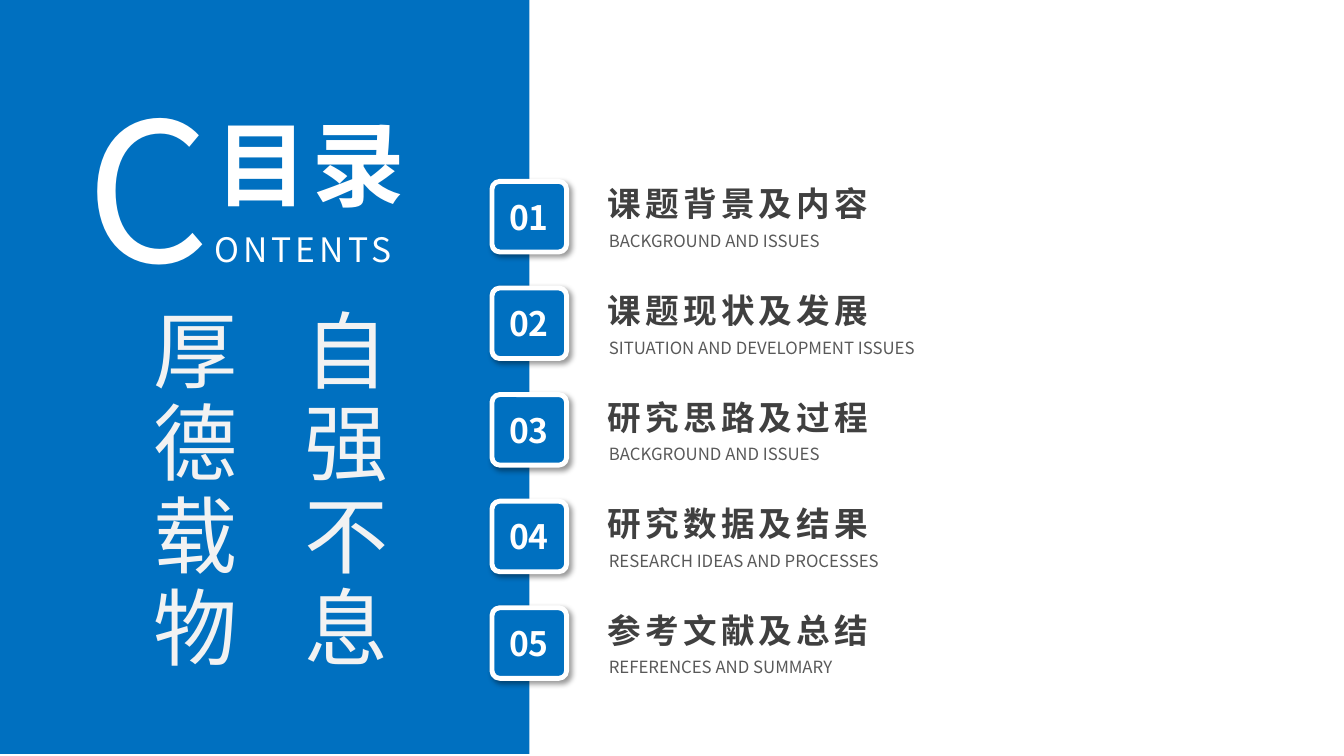
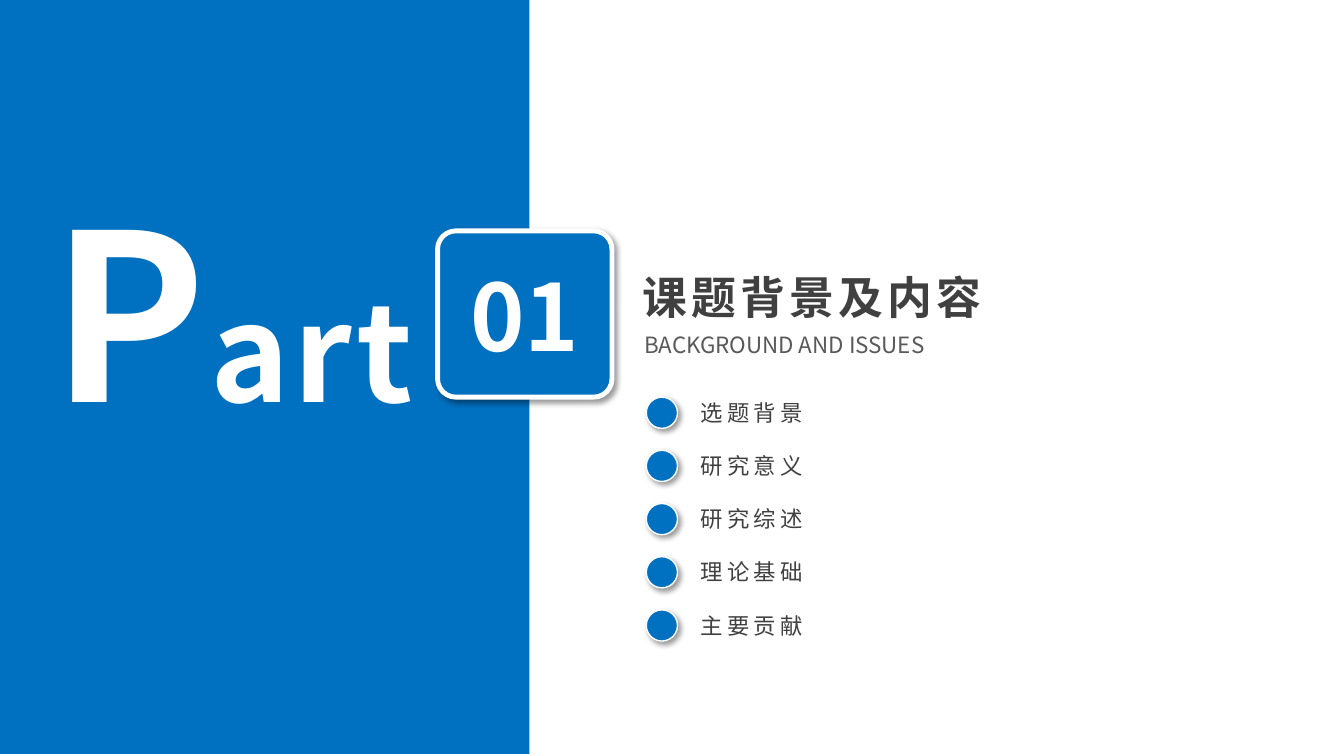
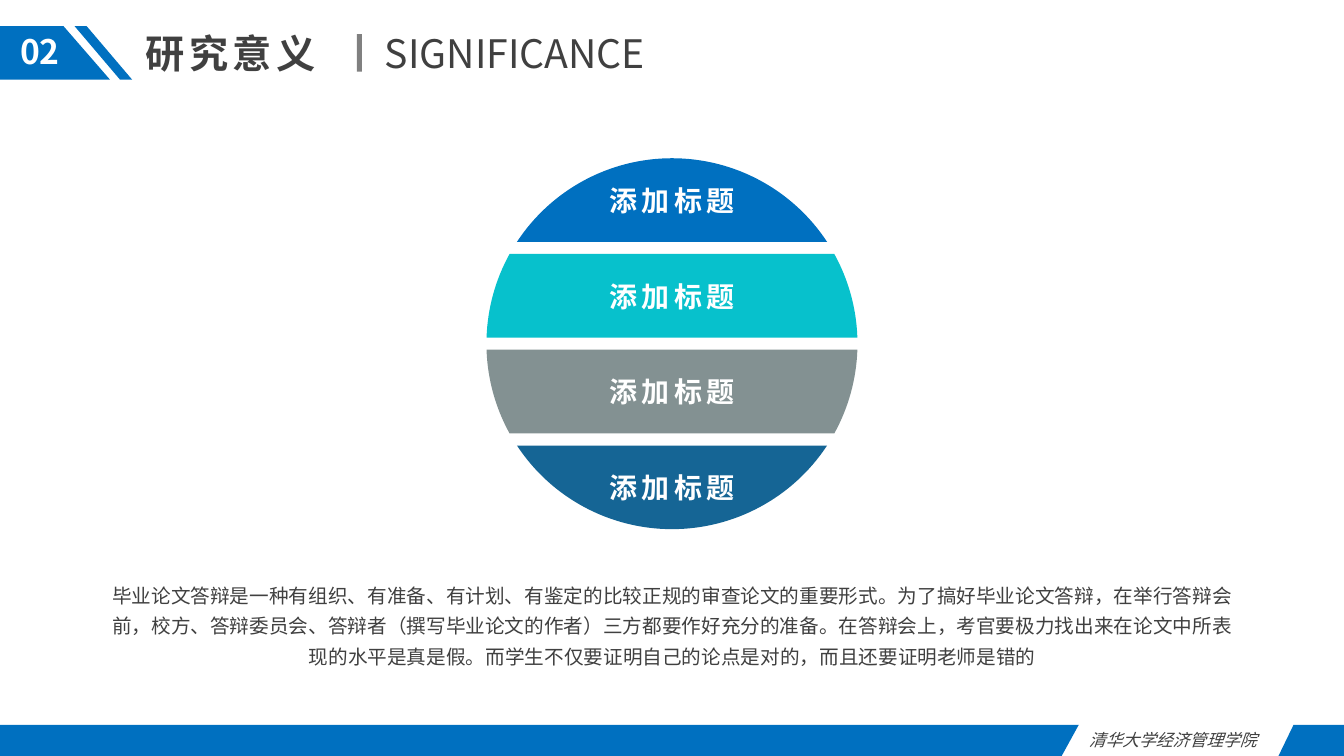
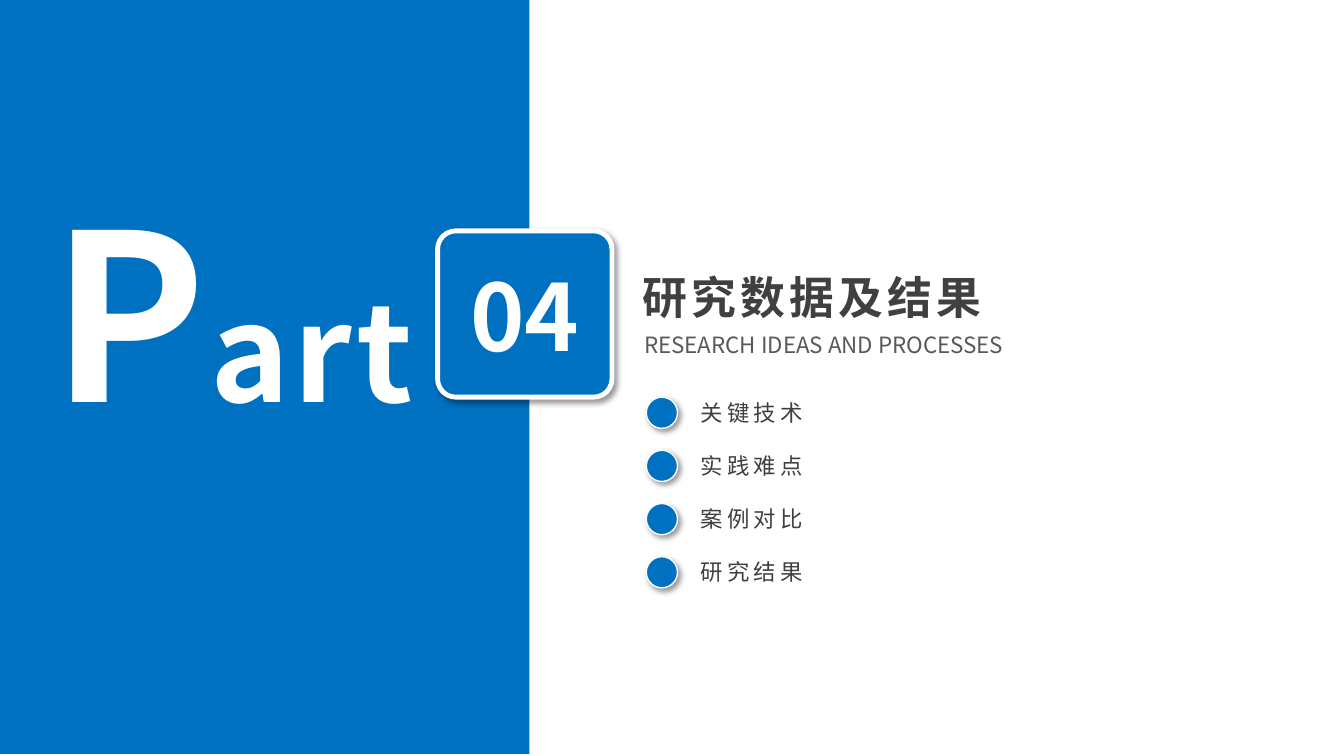
from dataclasses import dataclass
from math import asin, cos, sin, tan

from lxml import etree
from pptx import Presentation
from pptx.dml.color import RGBColor
from pptx.enum.shapes import MSO_SHAPE
from pptx.enum.text import MSO_ANCHOR, MSO_AUTO_SIZE, PP_ALIGN
from pptx.oxml.ns import qn
from pptx.util import Inches, Pt

RECT, ROUNDED, OVAL = MSO_SHAPE.RECTANGLE, MSO_SHAPE.ROUNDED_RECTANGLE, MSO_SHAPE.OVAL
LEFT, CENTER, JUSTIFY = PP_ALIGN.LEFT, PP_ALIGN.CENTER, PP_ALIGN.JUSTIFY
SLIDE_WIDTH, SLIDE_HEIGHT = 13.33, 7.5


@dataclass(frozen=True)
class Theme:
    # colours
    blue: str = "0070C0"
    teal: str = "07C1CC"
    slate: str = "839192"
    navy: str = "156595"
    white: str = "FFFFFF"
    pale: str = "F2F2F2"
    dark: str = "404040"
    muted: str = "595959"
    divider: str = "808080"
    # fonts and type sizes
    font: str = "Noto Sans CJK SC"
    body_font: str = "Arial"
    initial: int = 166
    contents_initial: int = 138
    part_word: int = 96
    display: int = 66
    motto: int = 60
    section: int = 32
    heading: int = 28
    item: int = 24
    band: int = 20
    topic: int = 16
    body: int = 14
    small: int = 12
    tracking: int = 3


THEME = Theme()

# Content: chapter title, English title and its width in the contents list
CHAPTERS = [
    ("课题背景及内容", "BACKGROUND AND ISSUES", 2.63),
    ("课题现状及发展", "SITUATION AND DEVELOPMENT ISSUES", 3.58),
    ("研究思路及过程", "BACKGROUND AND ISSUES", 2.63),
    ("研究数据及结果", "RESEARCH IDEAS AND PROCESSES", 3.35),
    ("参考文献及总结", "REFERENCES AND SUMMARY", 2.63),
]
MOTTO = ["自强不息", "厚德载物"]
PARTS = {
    1: {"english_width": 3.27,
        "topics": ["选题背景", "研究意义", "研究综述", "理论基础", "主要贡献"]},
    4: {"english_width": 4.58,
        "topics": ["关键技术", "实践难点", "案例对比", "研究结果"]},
}
SIGNIFICANCE = {
    "number": "02",
    "title": "研究意义",
    "english": "SIGNIFICANCE",
    "bands": [
        ("添加标题", THEME.blue),
        ("添加标题", THEME.teal),
        ("添加标题", THEME.slate),
        ("添加标题", THEME.navy),
    ],
    "summary": "毕业论文答辩是一种有组织、有准备、有计划、有鉴定的比较正规的审查论文的重要形式。"
               "为了搞好毕业论文答辩，在举行答辩会前，校方、答辩委员会、答辩者（撰写毕业论文的作者）"
               "三方都要作好充分的准备。在答辩会上，考官要极力找出来在论文中所表现的水平是真是假。"
               "而学生不仅要证明自己的论点是对的，而且还要证明老师是错的",
}
SCHOOL = "清华大学经济管理学院"


# Text and shape helpers; "parent" is a slide or a group
def style(run, size, color, bold=False, italic=False, tracking=0, font=THEME.font):
    run.font.size = Pt(size)
    run.font.bold = bold
    run.font.italic = italic
    run.font.color.rgb = RGBColor.from_string(color)
    run.font.name = font
    props = run.font._element
    etree.SubElement(props, qn("a:ea")).set("typeface", THEME.font)
    if tracking:
        props.set("spc", str(tracking * 100))


def add_text(parent, left, top, width, height, lines, size, color,
             align=LEFT, spacing=None, wrap=True, **look):
    box = parent.shapes.add_textbox(Inches(left), Inches(top), Inches(width), Inches(height))
    frame = box.text_frame
    frame.text = lines
    frame.word_wrap = wrap
    frame.auto_size = MSO_AUTO_SIZE.SHAPE_TO_FIT_TEXT
    for paragraph in frame.paragraphs:
        paragraph.alignment = align
        if spacing:
            paragraph.line_spacing = spacing
        for run in paragraph.runs:
            style(run, size, color, **look)
    return frame


def add_drop_cap(parent, place, initial, rest, sizes, align, bold=False):
    look = dict(color=THEME.white, bold=bold, tracking=THEME.tracking)
    frame = add_text(parent, *place, initial, sizes[0], align=align, **look)
    tail = frame.paragraphs[0].add_run()
    tail.text = rest
    style(tail, sizes[1], **look)


def paint(shape, fill, outline=0):
    shape.shadow.inherit = False
    shape.fill.solid()
    shape.fill.fore_color.rgb = RGBColor.from_string(fill)
    if outline:
        shape.line.color.rgb = RGBColor.from_string(THEME.white)
        shape.line.width = Pt(outline)
    else:
        shape.line.fill.background()


def add_block(parent, kind, left, top, width, height, fill=THEME.blue, outline=0):
    block = parent.shapes.add_shape(kind, Inches(left), Inches(top), Inches(width), Inches(height))
    paint(block, fill, outline)
    return block


def add_outline(parent, points, fill=THEME.blue):
    corners = [(Inches(x), Inches(y)) for x, y in points]
    builder = parent.shapes.build_freeform(*corners[0], scale=1.0)
    builder.add_line_segments(corners[1:], close=True)
    outline = builder.convert_to_shape()
    paint(outline, fill)
    return outline


def drop_shadow(shape):
    effects = shape._element.spPr.find(qn("a:effectLst"))
    shadow = etree.SubElement(effects, qn("a:outerShdw"), blurRad=str(Pt(4)), dist=str(Pt(3)),
                              dir=str(45 * 60000), algn="tl", rotWithShape="0")
    tint = etree.SubElement(shadow, qn("a:srgbClr"), val="000000")
    etree.SubElement(tint, qn("a:alpha"), val="40000")


def add_badge(slide, frame_place, text_place, number, size):
    badge = slide.shapes.add_group_shape()
    frame = add_block(badge, ROUNDED, *frame_place, outline=3.5)
    frame.adjustments[0] = 0.11
    drop_shadow(frame)
    add_text(badge, *text_place, f"{number:02d}", size, THEME.white, CENTER, bold=True)


# Parts shared by several slides
def new_slide(deck):
    return deck.slides.add_slide(deck.slide_layouts[6])


def new_panel_slide(deck):
    slide = new_slide(deck)
    add_block(slide, RECT, 0, -0.02, 5.25, 7.5)
    return slide


def add_header(slide, number, title, english):
    top, bottom = 0.26, 0.79
    add_text(slide, 1.35, 0.24, 1.96, 0.57, title, THEME.heading, THEME.dark,
             bold=True, tracking=THEME.tracking)
    add_block(slide, RECT, 3.54, 0.34, 0.05, 0.37, THEME.divider)
    add_text(slide, 3.72, 0.24, 2.93, 0.57, english, THEME.heading, THEME.dark, wrap=False)
    tag = slide.shapes.add_group_shape()
    add_outline(tag, [(0, top), (0.63, top), (1.09, bottom), (0, bottom)])
    add_outline(tag, [(0.86, top), (1.31, bottom), (1.19, bottom), (0.74, top)])
    add_text(tag, 0, top, 0.79, 0.5, number, THEME.item, THEME.white, CENTER, bold=True)


def add_footer(slide):
    top, bottom = 7.19, SLIDE_HEIGHT
    footer = slide.shapes.add_group_shape()
    add_outline(footer, [(0, top), (10.7, top), (10.53, bottom), (0, bottom)])
    add_text(footer, 10.7, top, 1.98, 0.3, SCHOOL, THEME.small, THEME.dark, JUSTIFY, italic=True)
    add_outline(footer, [(12.83, top), (SLIDE_WIDTH, top), (SLIDE_WIDTH, bottom), (12.68, bottom)])


# Slides
def build_contents(deck):
    slide = new_panel_slide(deck)
    add_drop_cap(slide, (0.76, 0.64, 3.68, 2.42), "C", "ONTENTS",
                 (THEME.contents_initial, THEME.item), JUSTIFY)
    add_text(slide, 2.04, 1.01, 2.44, 1.21, "目录", THEME.display, THEME.white, JUSTIFY,
             bold=True, tracking=THEME.tracking)

    first_top, last_top = 1.8, 6.03
    pitch = (last_top - first_top) / (len(CHAPTERS) - 1)
    tops = [first_top + row * pitch for row in range(len(CHAPTERS))]
    for number, top in enumerate(tops, start=1):
        add_badge(slide, (4.88, top, 0.74, 0.7), (4.85, top + 0.1, 0.79, 0.5), number, THEME.item)
    for top, (title, _, _) in zip(tops, CHAPTERS):
        add_text(slide, 5.93, top - 0.03, 3.05, 0.5, title, THEME.item, THEME.dark,
                 bold=True, tracking=THEME.tracking)

    motto = add_text(slide, 1.23, 2.96, 3.23, 4.11, "\n".join(MOTTO), THEME.motto, THEME.pale,
                     JUSTIFY, spacing=1.5, wrap=False, tracking=2 * THEME.tracking)
    motto._element.bodyPr.set("vert", "eaVert")

    for top, (_, english, width) in zip(tops, CHAPTERS):
        add_text(slide, 5.94, top + 0.44, width, 0.3, english, THEME.small, THEME.muted)


def build_part(deck, number):
    slide = new_panel_slide(deck)
    title, english, _ = CHAPTERS[number - 1]
    part = PARTS[number]
    add_drop_cap(slide, (-0.83, 1.64, 6.27, 2.89), "P", "art",
                 (THEME.initial, THEME.part_word), CENTER, bold=True)
    add_badge(slide, (4.34, 2.29, 1.73, 1.65), (4.28, 2.52, 1.85, 1.21), number, THEME.display)
    add_text(slide, 6.27, 2.63, 3.79, 0.64, title, THEME.section, THEME.dark,
             bold=True, tracking=THEME.tracking)
    add_text(slide, 6.29, 3.24, part["english_width"], 0.37, english, THEME.topic, THEME.muted)

    first_top, fifth_top = 3.94, 6.05
    pitch = (fifth_top - first_top) / 4
    for row, topic in enumerate(part["topics"]):
        top = first_top + row * pitch
        drop_shadow(add_block(slide, OVAL, 6.41, top, 0.31, 0.31, outline=1))
        add_text(slide, 6.85, top - 0.03, 1.79, 0.37, topic, THEME.topic, THEME.dark,
                 tracking=THEME.tracking)


def bend(shape, edge, handles):
    """Turn a straight edge of a freeform into a curve with two handles."""
    end = edge.find(qn("a:pt"))
    curve = etree.Element(qn("a:cubicBezTo"))
    for x, y in handles:
        etree.SubElement(curve, qn("a:pt"), x=str(Inches(x) - shape.left),
                         y=str(Inches(y) - shape.top))
    curve.append(end)
    edge.getparent().replace(edge, curve)


def add_circle_band(slide, center_x, center_y, radius, top, bottom, fill):
    """Draw the part of a circle between two heights."""
    start, end = (asin(max(-1, min(1, (y - center_y) / radius))) for y in (top, bottom))
    reach = 4 / 3 * tan((end - start) / 4)

    def on_circle(angle, pull=0):
        return (center_x + radius * (cos(angle) - pull * sin(angle)),
                center_y + radius * (sin(angle) + pull * cos(angle)))

    def mirror(points):
        return [(2 * center_x - x, y) for x, y in reversed(points)]

    side = [on_circle(start), on_circle(end)]
    handles = [on_circle(start, reach), on_circle(end, -reach)]
    band = add_outline(slide, side + mirror(side), fill)
    right, _, left = band._element.findall(".//" + qn("a:lnTo"))
    bend(band, right, handles)
    bend(band, left, mirror(handles))
    return band


def build_significance(deck):
    slide = new_slide(deck)
    add_header(slide, *(SIGNIFICANCE[key] for key in ("number", "title", "english")))
    add_footer(slide)

    # Circle cut into equal bands
    bands = SIGNIFICANCE["bands"]
    center_x, center_y, radius, gap = SLIDE_WIDTH / 2, 3.41, 1.84, 0.12
    height = (2 * radius - gap * (len(bands) - 1)) / len(bands)
    for row, (words, fill) in enumerate(bands):
        top = center_y - radius + row * (height + gap)
        band = add_circle_band(slide, center_x, center_y, radius, top, top + height, fill)
        frame = band.text_frame
        frame.vertical_anchor = MSO_ANCHOR.MIDDLE
        frame.text = words
        frame.paragraphs[0].alignment = CENTER
        style(frame.paragraphs[0].runs[0], THEME.band, THEME.white,
              bold=True, tracking=THEME.tracking)

    add_text(slide, 0.96, 5.67, 11.42, 1.02, SIGNIFICANCE["summary"], THEME.body, THEME.dark,
             CENTER, spacing=1.3, font=THEME.body_font)


def main():
    deck = Presentation()
    deck.slide_width, deck.slide_height = Inches(SLIDE_WIDTH), Inches(SLIDE_HEIGHT)
    build_contents(deck)
    build_part(deck, 1)
    build_significance(deck)
    build_part(deck, 4)
    deck.save("out.pptx")


if __name__ == "__main__":
    main()
